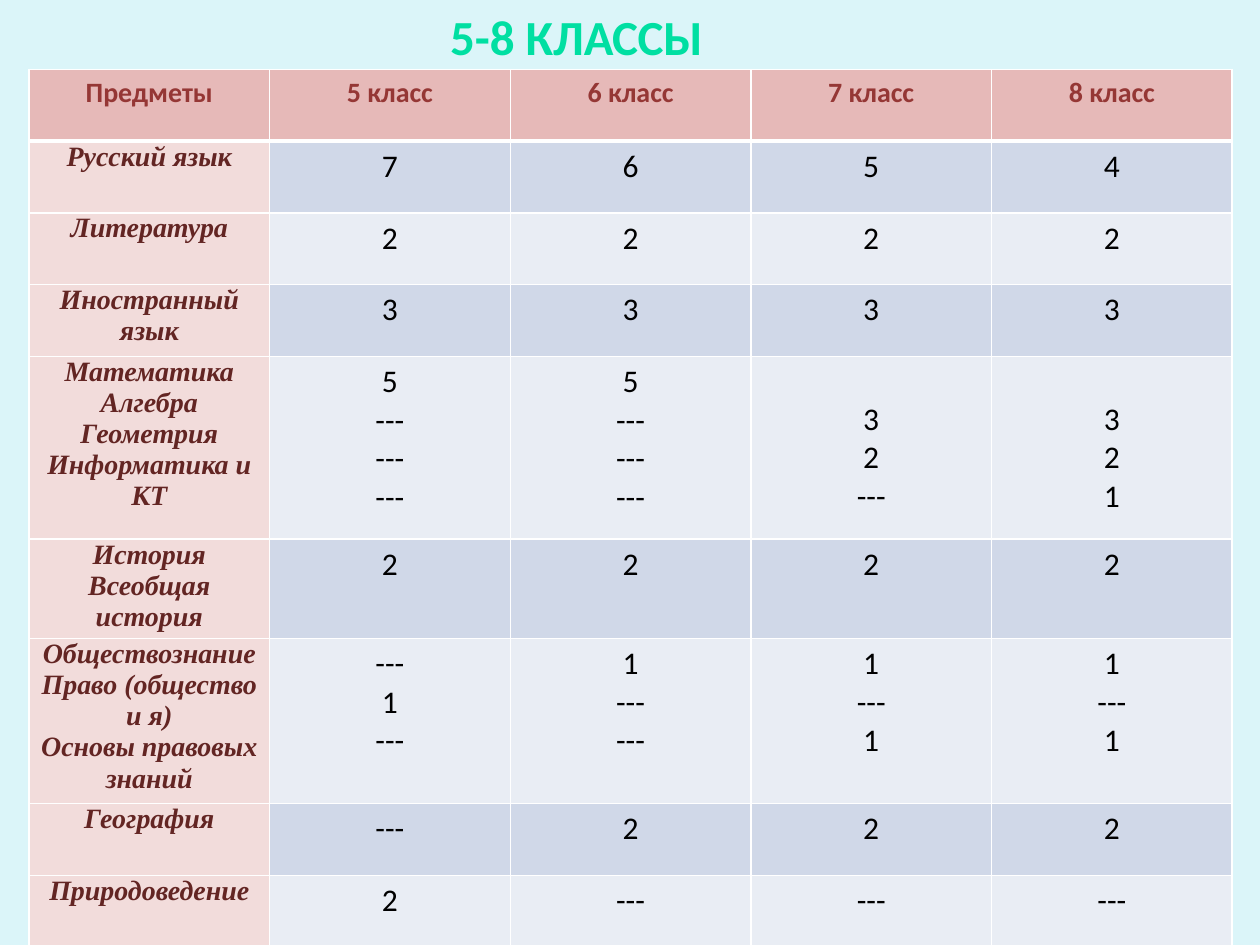
from dataclasses import dataclass

from lxml.etree import SubElement
from pptx import Presentation
from pptx.dml.color import RGBColor
from pptx.enum.text import MSO_ANCHOR, PP_ALIGN
from pptx.oxml.ns import qn
from pptx.util import Inches, Pt


@dataclass(frozen=True)
class Theme:
    background: str = "DBF5F9"
    title_color: str = "00DFA2"
    header_fill: str = "E6B9B8"
    header_color: str = "953735"
    subject_fill: str = "F2DCDB"
    subject_color: str = "632523"
    bands: tuple = ("D0D8E8", "E9EDF4")
    border: str = "FFFFFF"
    text_color: str = "000000"
    sans: str = "Calibri"
    serif: str = "Times New Roman"
    title_size: int = 28
    label_size: int = 16
    hours_size: int = 18


class TimetableSlide:
    def __init__(self, presentation, theme):
        self.theme = theme
        self.slide = presentation.slides.add_slide(presentation.slide_layouts[6])
        fill = self.slide.background.fill
        fill.solid()
        fill.fore_color.rgb = RGBColor.from_string(theme.background)
        self.title_font = self.font(theme.sans, theme.title_size, True, False)
        self.header_font = self.font(theme.sans, theme.label_size, True, False)
        self.subject_font = self.font(theme.serif, theme.label_size, True, True)
        self.hours_font = self.font(theme.sans, theme.hours_size, False, False)

    def font(self, name, size, bold, italic):
        return {"name": name, "size": Pt(size), "bold": bold, "italic": italic}

    def add_lines(self, text_frame, lines, font_values, color):
        text_frame.word_wrap = True
        for index, line in enumerate(lines):
            paragraph = text_frame.paragraphs[0] if index == 0 else text_frame.add_paragraph()
            paragraph.alignment = PP_ALIGN.CENTER
            run = paragraph.add_run()
            run.text = line
            for name, value in font_values.items():
                setattr(run.font, name, value)
            run.font.color.rgb = RGBColor.from_string(color)

    def title(self, text, left, top, width, height):
        box = self.slide.shapes.add_textbox(
            Inches(left), Inches(top), Inches(width), Inches(height))
        self.add_lines(box.text_frame, [text], self.title_font, self.theme.title_color)

    def borders(self, cell, widths):
        properties = cell._tc.get_or_add_tcPr()
        for side, width in widths.items():
            line = SubElement(properties, qn(f"a:ln{side}"), w=str(Pt(width)))
            color = SubElement(SubElement(line, qn("a:solidFill")), qn("a:srgbClr"))
            color.set("val", self.theme.border)

    def cell(self, cell, lines, font_values, color, fill, margins, widths):
        for name, value in margins.items():
            setattr(cell, f"margin_{name}", Inches(value))
        cell.vertical_anchor = MSO_ANCHOR.TOP
        self.borders(cell, widths)
        cell.fill.solid()
        cell.fill.fore_color.rgb = RGBColor.from_string(fill)
        self.add_lines(cell.text_frame, lines, font_values, color)

    def table(self, headers, rows, left, top, column_width, heights):
        theme = self.theme
        table = self.slide.shapes.add_table(
            len(heights), len(headers), Inches(left), Inches(top),
            Inches(column_width * len(headers)), Inches(sum(heights))).table
        table.first_row = table.horz_banding = False
        for column in table.columns:
            column.width = Inches(column_width)
        for row, height in zip(table.rows, heights):
            row.height = Inches(height)

        thin = {"L": 1, "R": 1, "T": 1, "B": 1}
        for column, header in enumerate(headers):
            self.cell(table.cell(0, column), [header], self.header_font,
                      theme.header_color, theme.header_fill, {}, {**thin, "B": 3})

        subject_margins = {"left": 0.07, "right": 0.07, "top": 0, "bottom": 0}
        for number, (subjects, *hours) in enumerate(rows, 1):
            widths = {**thin, "T": 3} if number == 1 else thin
            self.cell(table.cell(number, 0), subjects.split("\n"), self.subject_font,
                      theme.subject_color, theme.subject_fill, subject_margins, widths)
            line_count = max(len(entry.split()) for entry in hours)
            for column, entry in enumerate(hours, 1):
                lines = entry.split()
                skipped = line_count - len(lines)
                margins = {"top": 0.05 + 0.3 * skipped}
                self.cell(table.cell(number, column), lines, self.hours_font,
                          theme.text_color, theme.bands[(number - 1) % 2],
                          margins, widths)


HEADERS = ["Предметы"] + [f"{grade} класс" for grade in range(5, 9)]
ROWS = [
    ("Русский язык", "7", "6", "5", "4"),
    ("Литература", "2", "2", "2", "2"),
    ("Иностранный язык", "3", "3", "3", "3"),
    ("Математика\nАлгебра\nГеометрия\nИнформатика и КТ",
     "5 --- --- ---", "5 --- --- ---", "3 2 ---", "3 2 1"),
    ("История\nВсеобщая история", "2", "2", "2", "2"),
    ("Обществознание Право (общество и я)\nОсновы правовых знаний",
     "--- 1 ---", "1 --- ---", "1 --- 1", "1 --- 1"),
    ("География", "---", "2", "2", "2"),
    ("Природоведение", "2", "---", "---", "---"),
]
HEIGHTS = [0.57] * 4 + [1.45, 0.79, 1.31] + [0.57] * 2


def main():
    presentation = Presentation()
    presentation.slide_width = Inches(10)
    presentation.slide_height = Inches(7.5)
    timetable = TimetableSlide(presentation, Theme())
    timetable.table(HEADERS, ROWS, 0.23, 0.55, 1.91, HEIGHTS)
    timetable.title("5-8 КЛАССЫ", 2.66, 0, 3.83, 0.57)
    presentation.save("out.pptx")


if __name__ == "__main__":
    main()
